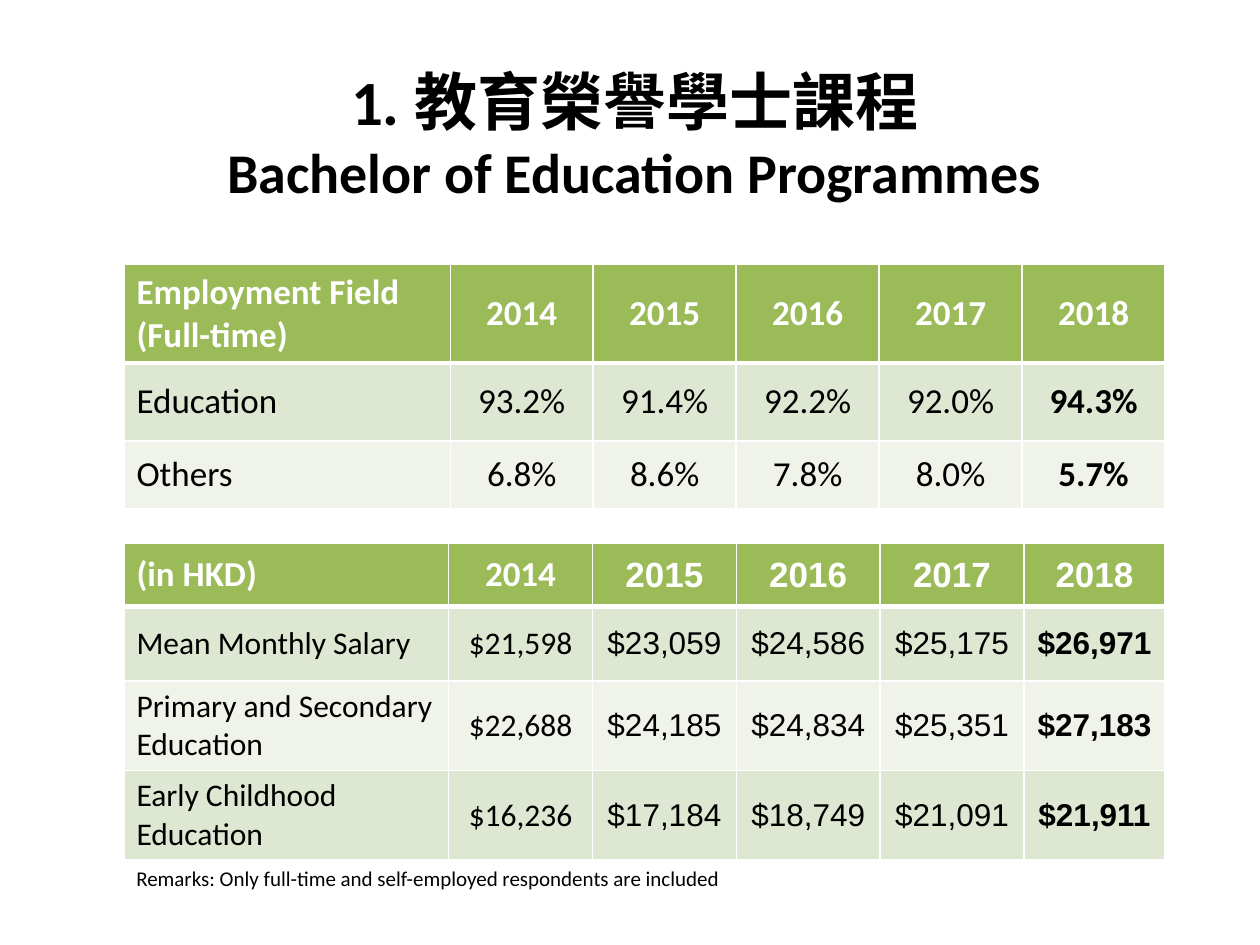
from pptx import Presentation
from pptx.util import Pt
from pptx.dml.color import RGBColor
from pptx.enum.text import PP_ALIGN, MSO_ANCHOR
from pptx.oxml import parse_xml
from pptx.oxml.ns import nsdecls

# Content
TITLE = [("1. 教育榮譽學士課程", 36), ("Bachelor of Education Programmes", 32)]
REMARKS = "Remarks: Only full-time and self-employed respondents are included"
YEARS = ["2014", "2015", "2016", "2017", "2018"]
EMPLOYMENT = [
    ["Employment Field (Full-time)", *YEARS],
    ["Education", "93.2%", "91.4%", "92.2%", "92.0%", "94.3%"],
    ["Others", "6.8%", "8.6%", "7.8%", "8.0%", "5.7%"],
]
SALARY = [
    ["(in HKD)", *YEARS],
    ["Mean Monthly Salary", "$21,598", "$23,059", "$24,586", "$25,175", "$26,971"],
    ["Primary and Secondary Education", "$22,688", "$24,185", "$24,834", "$25,351", "$27,183"],
    ["Early Childhood Education", "$16,236", "$17,184", "$18,749", "$21,091", "$21,911"],
]

# Colours
BLACK = RGBColor(0x00, 0x00, 0x00)
WHITE = RGBColor(0xFF, 0xFF, 0xFF)
HEADER = RGBColor(0x9B, 0xBB, 0x59)
BANDS = [RGBColor(0xEF, 0xF3, 0xEA), RGBColor(0xDE, 0xE7, 0xD1)]

LEFT = 70.8  # shared left edge of tables and remarks


def add_run(p, text, size=20, font="Calibri", color=BLACK, bold=False):
    r = p.add_run()
    r.text = text
    r.font.size = Pt(size)
    r.font.name = font
    r.font.bold = bold
    r.font.color.rgb = color


def add_text_box(s, x, y, w, h, anchor=MSO_ANCHOR.TOP):
    tf = s.shapes.add_textbox(Pt(x), Pt(y), Pt(w), Pt(h)).text_frame
    tf.word_wrap = True
    tf.vertical_anchor = anchor
    return tf.paragraphs[0]


def set_borders(cell, top, bottom):
    tc_pr = cell._tc.get_or_add_tcPr()
    sides = [("lnL", 1), ("lnR", 1), ("lnT", top), ("lnB", bottom)]
    for i, (side, width) in enumerate(sides):
        tc_pr.insert(i, parse_xml(
            f'<a:{side} {nsdecls("a")} w="{Pt(width)}"><a:solidFill>'
            f'<a:srgbClr val="{WHITE}"/></a:solidFill></a:{side}>'))


def add_data_table(s, rows, y, widths, heights, body_size, later_font):
    """Later_font is the font of the years after the first one."""
    table = s.shapes.add_table(len(rows), len(widths), Pt(LEFT), Pt(y),
                               Pt(sum(widths)), Pt(sum(heights))).table
    for column, width in zip(table.columns, widths):
        column.width = Pt(width)
    for row, height in zip(table.rows, heights):
        row.height = Pt(height)
    last = len(widths) - 1
    for i, row in enumerate(rows):
        head = i == 0
        for j, text in enumerate(row):
            cell = table.cell(i, j)
            cell.vertical_anchor = MSO_ANCHOR.MIDDLE
            cell.fill.solid()
            cell.fill.fore_color.rgb = HEADER if head else BANDS[i % 2]
            set_borders(cell, top=3 if i == 1 else 1, bottom=3 if head else 1)
            p = cell.text_frame.paragraphs[0]
            p.alignment = PP_ALIGN.CENTER if j else PP_ALIGN.LEFT
            add_run(p, text, size=20 if head else body_size,
                    font=later_font if j > 1 else "Calibri",
                    color=WHITE if head else BLACK, bold=head or j == last)


prs = Presentation()
prs.slide_width, prs.slide_height = Pt(720), Pt(540)
s = prs.slides.add_slide(prs.slide_layouts[6])

# Tables
add_data_table(s, EMPLOYMENT, 151.2, [186.5] + [81.7] * 5, [55.8, 44.6, 38.6],
               body_size=20, later_font="Calibri")
add_data_table(s, SALARY, 310.6, [185.6] + [82.2] * 4 + [80.7], [36, 42.6, 50.7, 50.7],
               body_size=18, later_font="Arial")

# Remarks
add_run(add_text_box(s, LEFT, 491, 386, 21.8), REMARKS, size=12)

# Title
p = add_text_box(s, 22.4, 22.4, 680.4, 108, MSO_ANCHOR.MIDDLE)
p.alignment = PP_ALIGN.CENTER
for i, (text, size) in enumerate(TITLE):
    if i:
        p.add_line_break()
    add_run(p, text, size=size, bold=True)

prs.save("out.pptx")
